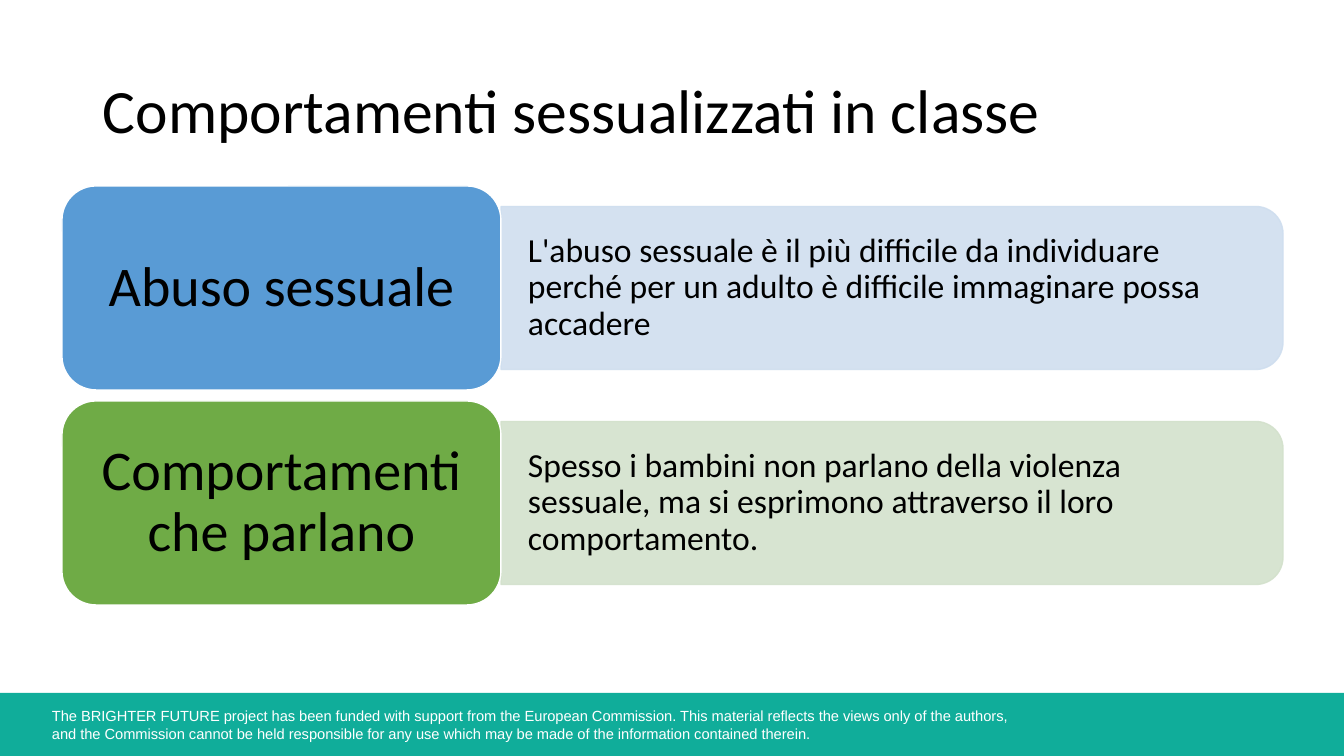
from lxml import etree
from pptx import Presentation
from pptx import util as u
from pptx.dml.color import RGBColor
from pptx.enum import shapes, text
from pptx.oxml.ns import qn

PX = 914400 / 100.8
BLACK = RGBColor(0x00, 0x00, 0x00)
WHITE = RGBColor(0xFF, 0xFF, 0xFF)
TEAL = RGBColor(0x10, 0xAD, 0x9A)
BLUE = RGBColor(0x59, 0x9B, 0xD5)
PALE_BLUE = RGBColor(0xCF, 0xDE, 0xEF)
GREEN = RGBColor(0x6F, 0xAB, 0x46)
PALE_GREEN = RGBColor(0xD3, 0xE1, 0xCC)

ROWS = [
    ("Abuso sessuale",
     "L'abuso sessuale è il più difficile da individuare perché per un adulto "
     "è difficile immaginare possa accadere", BLUE, PALE_BLUE),
    ("Comportamenti che parlano",
     "Spesso i bambini non parlano della violenza sessuale, ma si esprimono "
     "attraverso il loro comportamento.", GREEN, PALE_GREEN),
]
FUNDING = (
    "The BRIGHTER FUTURE project has been funded with support from the European "
    "Commission. This material reflects the views only of the authors,\n"
    "and the Commission cannot be held responsible for any use which may be made "
    "of the information contained therein."
)


def px(n):
    """Turn pixels into EMU."""
    return u.Emu(round(n * PX))


def write(sp, words, size, color=BLACK, font="Calibri", align=text.PP_ALIGN.LEFT,
          anchor=text.MSO_ANCHOR.MIDDLE, inset=(10, 5), spacing=0.9):
    """Fill a shape with one formatted paragraph."""
    tf = sp.text_frame
    tf.word_wrap = True
    tf.vertical_anchor = anchor
    tf.margin_left = tf.margin_right = px(inset[0])
    tf.margin_top = tf.margin_bottom = px(inset[1])
    p = tf.paragraphs[0]
    p.alignment = align
    p.line_spacing = spacing
    for i, line in enumerate(words.split("\n")):
        if i:
            p.add_line_break()
        r = p.add_run()
        r.text = line
        r.font.size = u.Pt(size)
        r.font.name = font
        r.font.color.rgb = color


def add_box(s, x, y, w, h):
    """Add a text box."""
    return s.shapes.add_textbox(px(x), px(y), px(w), px(h))


def add_block(s, kind, x, y, w, h, fill, line=None):
    """Add a filled preset shape with an optional thin outline."""
    sp = s.shapes.add_shape(kind, px(x), px(y), px(w), px(h))
    sp.shadow.inherit = False
    sp.fill.solid()
    sp.fill.fore_color.rgb = fill
    if line is None:
        sp.line.fill.background()
    else:
        sp.line.color.rgb = line
        sp.line.width = u.Pt(1)
    return sp


def add_panel(s, x, y, w, h, color):
    """Add a translucent panel rounded on its right side."""
    sp = add_block(s, shapes.MSO_SHAPE.ROUND_2_SAME_RECTANGLE,
                   x + (w - h) / 2, y + (h - w) / 2, h, w, color, color)
    sp.rotation = 90
    for clr in sp._element.spPr.iter(qn("a:srgbClr")):
        etree.SubElement(clr, qn("a:alpha")).set("val", "89000")


def add_row(s, x, y, w, h, label, detail, color, pale):
    """Place a label block and the panel explaining it."""
    label_w = 439
    panel_x, panel_w = x + label_w, w - label_w
    panel_h = round(h * 0.8)
    add_panel(s, panel_x, y + (h - panel_h) / 2, panel_w, panel_h, pale)
    write(add_box(s, panel_x, y + 28, panel_w - 10, h - 56), detail, 24, inset=(27, 14))
    sp = add_block(s, shapes.MSO_SHAPE.ROUNDED_RECTANGLE, x, y, label_w, h, color, WHITE)
    write(sp, label, 40, align=text.PP_ALIGN.CENTER, inset=(20, 10))


def add_footer(s, x, y, w, h):
    """Place the funding band."""
    add_block(s, shapes.MSO_SHAPE.RECTANGLE, x, y, w, h, TEAL)
    write(add_box(s, x + 42, y + 9, 1008, 45), FUNDING, 10.5, WHITE, "Arial",
          anchor=text.MSO_ANCHOR.TOP, spacing=1.0)


def main():
    """Build and save the slide."""
    prs = Presentation()
    prs.slide_width, prs.slide_height = px(1344), px(756)
    s = prs.slides.add_slide(prs.slide_layouts[6])
    add_footer(s, 0, 693, 1344, 63)
    write(add_box(s, 93, 41, 1159, 146), "Comportamenti sessualizzati in classe", 44)
    for i, row in enumerate(ROWS):
        add_row(s, 62, 186 + 215 * i, 1221, 204, *row)
    prs.save("out.pptx")


if __name__ == "__main__":
    main()
